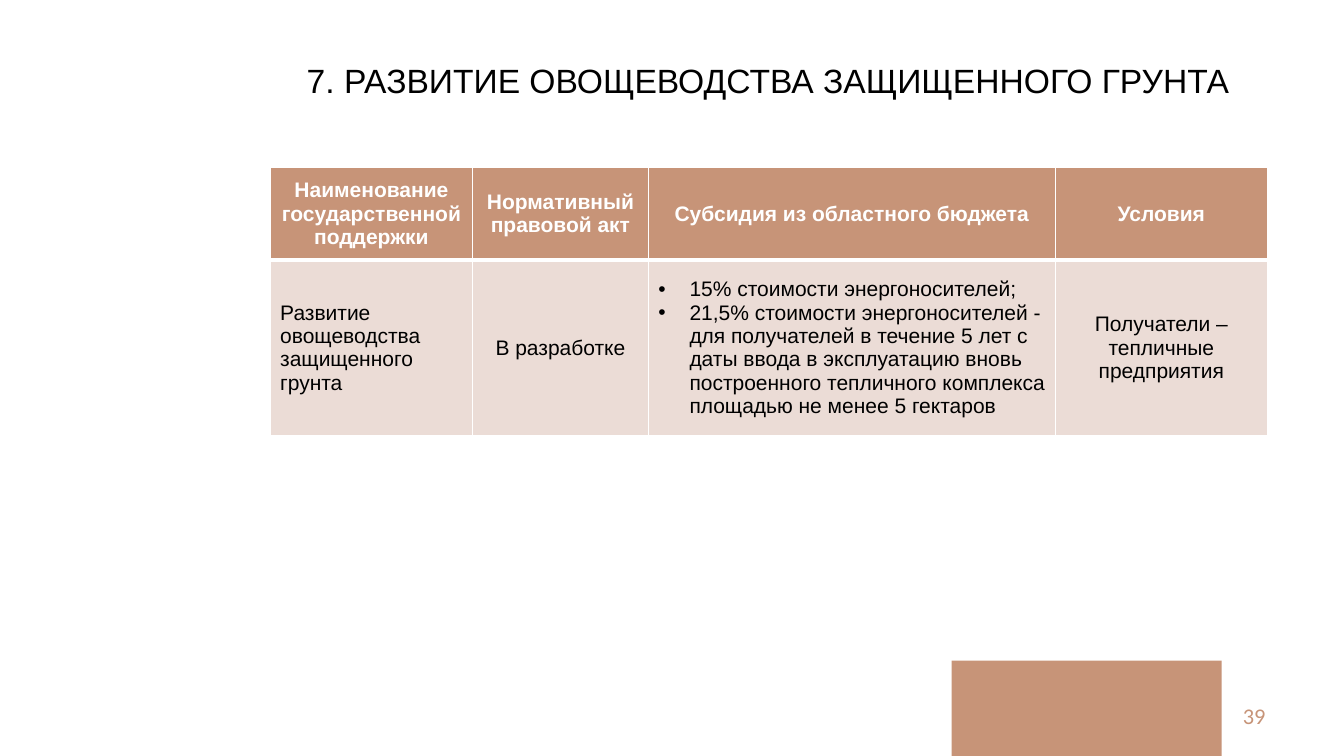
from dataclasses import dataclass
from lxml.etree import SubElement as Sub
from pptx import Presentation
from pptx.dml.color import RGBColor as RGB
from pptx.enum.shapes import MSO_SHAPE as Shape
from pptx.enum.text import MSO_ANCHOR as Anchor, PP_ALIGN as Align
from pptx.oxml.ns import qn
from pptx.util import Inches, Pt


@dataclass(frozen=True)
class Theme:
    clay: str = "C79478"
    pale: str = "EBDCD6"
    white: str = "FFFFFF"
    black: str = "000000"
    face: str = "Arial"
    digit: str = "Calibri"
    title: int = 24
    page: int = 16
    cell: int = 15
    thin: int = 1
    thick: int = 3


THEME = Theme()
WIDE, HIGH = Inches(13.33), Inches(7.5)

TITLE = "7. РАЗВИТИЕ ОВОЩЕВОДСТВА ЗАЩИЩЕННОГО ГРУНТА"
HEAD = ["Наименование государственной поддержки", "Нормативный правовой акт",
        "Субсидия из областного бюджета", "Условия"]
BODY = ["Развитие овощеводства защищенного грунта", "В разработке",
        ["15% стоимости энергоносителей;",
         "21,5% стоимости энергоносителей - для получателей в течение 5 лет "
         "с даты ввода в эксплуатацию вновь построенного тепличного комплекса "
         "площадью не менее 5 гектаров"],
        "Получатели – тепличные предприятия"]
COLS = [2.01, 1.74, 4.04, 2.1]
ROWS = [0.92, 1.74]


def area(left, top, width, height):
    return [round(side * part / 100) for side, part in
            zip((WIDE, HIGH, WIDE, HIGH), (left, top, width, height))]


def style(item, form):
    for name, value in form.items():
        setattr(item, name, value)


def write(para, text, size, tint, face=THEME.face, bold=False, align=Align.CENTER):
    para.alignment = align
    run = para.add_run()
    run.text = text
    style(run.font, {"size": Pt(size), "name": face, "bold": bold})
    run.font.color.rgb = RGB.from_string(tint)


def paint(item, tint):
    item.fill.solid()
    item.fill.fore_color.rgb = RGB.from_string(tint)


def dot(para):
    props = para._p.get_or_add_pPr()
    indent = Inches(0.31)
    props.set("marL", str(indent))
    props.set("indent", str(-indent))
    Sub(props, qn("a:buFont"), typeface=THEME.face)
    Sub(props, qn("a:buChar"), char="•")


def edge(cell, widths):
    props = cell._tc.get_or_add_tcPr()
    for side, width in zip("LRTB", widths):
        line = Sub(props, qn(f"a:ln{side}"), w=str(Pt(width)))
        Sub(Sub(line, qn("a:solidFill")), qn("a:srgbClr"), val=THEME.white)


def title(slide, box):
    frame = slide.shapes.add_textbox(*box).text_frame
    frame.word_wrap = False
    write(frame.paragraphs[0], TITLE, THEME.title, THEME.black)


def footer(slide, block, box):
    rect = slide.shapes.add_shape(Shape.RECTANGLE, *block)
    rect.shadow.inherit = False
    paint(rect, THEME.clay)
    rect.line.fill.background()
    frame = slide.shapes.add_textbox(*box).text_frame
    style(frame, {"word_wrap": True, "vertical_anchor": Anchor.MIDDLE})
    write(frame.paragraphs[0], "39", THEME.page, THEME.clay, THEME.digit, align=Align.RIGHT)


def fill(cell, text, head, align):
    thin, thick = THEME.thin, THEME.thick
    edge(cell, (thin, thin, thin, thick) if head else (thin, thin, thick, thin))
    paint(cell, THEME.clay if head else THEME.pale)
    cell.vertical_anchor = Anchor.MIDDLE
    items = text if isinstance(text, list) else [text]
    frame = cell.text_frame
    for num, item in enumerate(items):
        para = frame.add_paragraph() if num else frame.paragraphs[0]
        if items is text:
            dot(para)
        write(para, item, THEME.cell, THEME.white if head else THEME.black,
              bold=head, align=align)


def grid(slide, box):
    table = slide.shapes.add_table(len(ROWS), len(COLS), *box).table
    for col, part in zip(table.columns, COLS):
        col.width = round(box[2] * part / sum(COLS))
    for row, part in zip(table.rows, ROWS):
        row.height = round(box[3] * part / sum(ROWS))
    for y, texts in enumerate((HEAD, BODY)):
        for x, text in enumerate(texts):
            left = y == 1 and x in (0, 2)
            fill(table.cell(y, x), text, y == 0, Align.LEFT if left else Align.CENTER)


def main():
    deck = Presentation()
    style(deck, {"slide_width": WIDE, "slide_height": HIGH})
    slide = deck.slides.add_slide(deck.slide_layouts[6])
    footer(slide, area(70.8, 87.4, 20.1, 12.6), area(72.4, 92, 22.5, 5.33))
    title(slide, area(21.75, 7.2, 70.8, 6.67))
    grid(slide, area(20.1, 22.13, 74.2, 35.47))
    deck.save("out.pptx")


if __name__ == "__main__":
    main()
